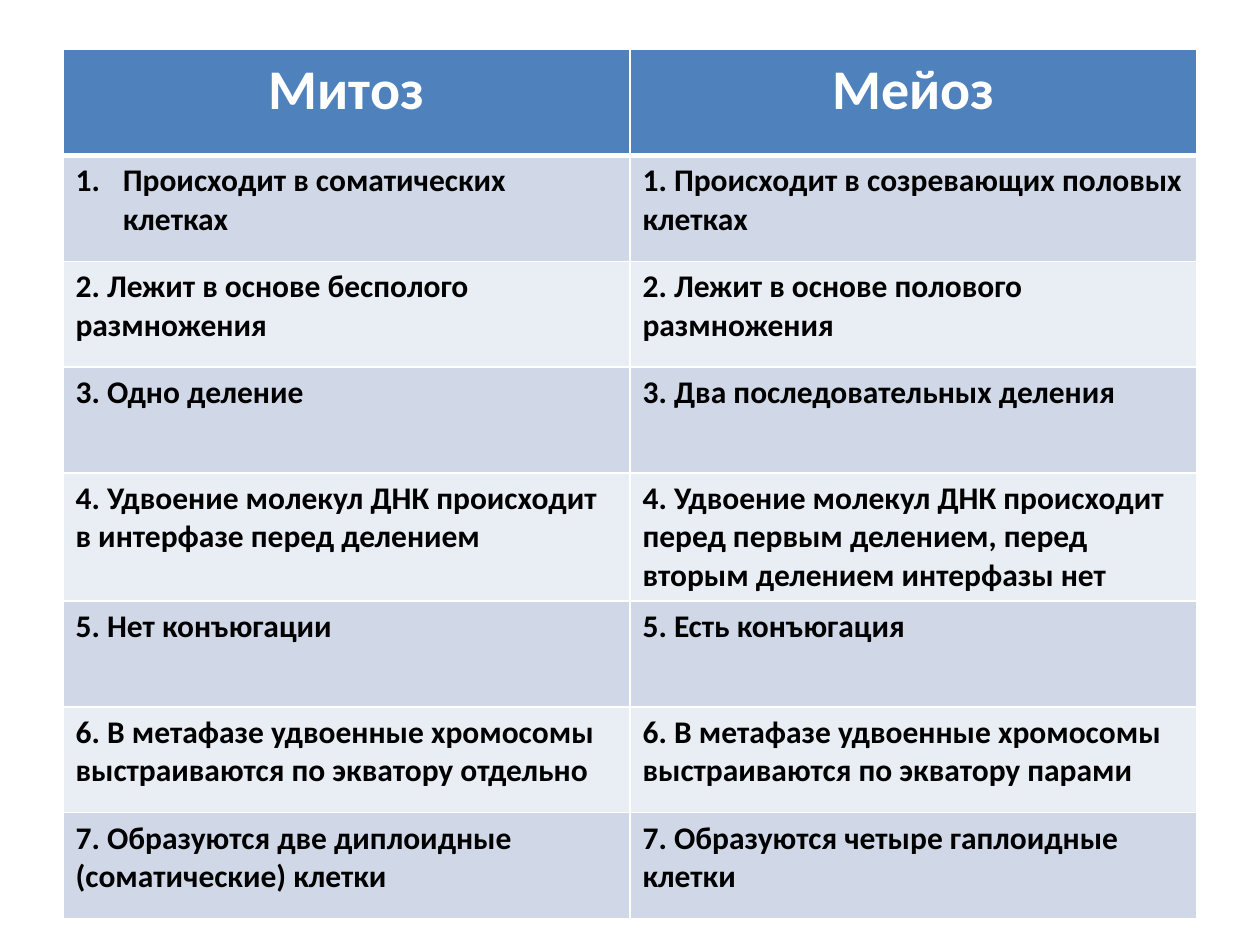
from dataclasses import dataclass

from lxml.etree import SubElement
from pptx import Presentation
from pptx.dml.color import RGBColor
from pptx.enum.text import PP_ALIGN
from pptx.oxml.ns import qn
from pptx.table import _Cell
from pptx.util import Pt

WHITE = RGBColor(0xFF, 0xFF, 0xFF)
BLACK = RGBColor(0x00, 0x00, 0x00)
HEADER_BLUE = RGBColor(0x4F, 0x81, 0xBD)
BAND_COLORS = (RGBColor(0xD0, 0xD8, 0xE8), RGBColor(0xE9, 0xED, 0xF4))

LEFT, TOP = Pt(36), Pt(28.35)
COLUMN_WIDTH, ROW_HEIGHT = Pt(324), Pt(60.5)
THIN, THICK = Pt(1), Pt(3)
NUMBER_INDENT = Pt(27)


@dataclass(frozen=True)
class Comparison:
    mitosis: str
    meiosis: str


@dataclass(frozen=True)
class CellStyle:
    fill: RGBColor
    color: RGBColor
    size: Pt
    alignment: PP_ALIGN
    top: Pt = THIN
    bottom: Pt = THIN


HEADER = Comparison("Митоз", "Мейоз")
COMPARISONS = (
    Comparison("Происходит в соматических клетках",
               "1. Происходит в созревающих половых клетках"),
    Comparison("2. Лежит в основе бесполого размножения",
               "2. Лежит в основе полового размножения"),
    Comparison("3. Одно деление", "3. Два последовательных деления"),
    Comparison("4. Удвоение молекул ДНК происходит в интерфазе перед делением",
               "4. Удвоение молекул ДНК происходит перед первым делением, "
               "перед вторым делением интерфазы нет"),
    Comparison("5. Нет конъюгации", "5. Есть конъюгация"),
    Comparison("6. В метафазе удвоенные хромосомы выстраиваются по экватору отдельно",
               "6. В метафазе удвоенные хромосомы выстраиваются по экватору парами"),
    Comparison("7. Образуются две диплоидные (соматические) клетки",
               "7. Образуются четыре гаплоидные клетки"),
)


def set_borders(cell: _Cell, top: Pt, bottom: Pt) -> None:
    """Draw white cell edges; must run before the cell gets its fill."""
    properties = cell._tc.get_or_add_tcPr()
    for tag, width in (("lnL", THIN), ("lnR", THIN), ("lnT", top), ("lnB", bottom)):
        line = SubElement(properties, qn(f"a:{tag}"), w=str(int(width)))
        fill = SubElement(line, qn("a:solidFill"))
        SubElement(fill, qn("a:srgbClr"), val=str(WHITE))


def fill_cell(cell: _Cell, text: str, style: CellStyle) -> None:
    set_borders(cell, style.top, style.bottom)
    cell.fill.solid()
    cell.fill.fore_color.rgb = style.fill
    para = cell.text_frame.paragraphs[0]
    para.text = text
    para.alignment = style.alignment
    para.font.name = "Calibri"
    para.font.size = style.size
    para.font.bold = True
    para.font.color.rgb = style.color


def number_paragraph(cell: _Cell) -> None:
    """Give the cell's paragraph an automatic number with a hanging indent."""
    properties = cell.text_frame.paragraphs[0]._p.get_or_add_pPr()
    properties.set("marL", str(int(NUMBER_INDENT)))
    properties.set("indent", str(-int(NUMBER_INDENT)))
    number = properties.makeelement(qn("a:buAutoNum"), {"type": "arabicPeriod"})
    properties.insert(0, number)


def row_style(index: int) -> CellStyle:
    if index == 0:
        return CellStyle(HEADER_BLUE, WHITE, Pt(32), PP_ALIGN.CENTER, bottom=THICK)
    return CellStyle(BAND_COLORS[(index - 1) % 2], BLACK, Pt(18), PP_ALIGN.LEFT,
                     top=THICK if index == 1 else THIN)


def main() -> None:
    deck = Presentation()
    deck.slide_width, deck.slide_height = Pt(720), Pt(540)
    page = deck.slides.add_slide(deck.slide_layouts[6])

    rows = (HEADER, *COMPARISONS)
    table = page.shapes.add_table(len(rows), 2, LEFT, TOP, 2 * COLUMN_WIDTH,
                                  len(rows) * ROW_HEIGHT).table
    for column in table.columns:
        column.width = COLUMN_WIDTH
    for index, comparison in enumerate(rows):
        table.rows[index].height = ROW_HEIGHT
        style = row_style(index)
        fill_cell(table.cell(index, 0), comparison.mitosis, style)
        fill_cell(table.cell(index, 1), comparison.meiosis, style)
    number_paragraph(table.cell(1, 0))

    deck.save("out.pptx")


if __name__ == "__main__":
    main()
